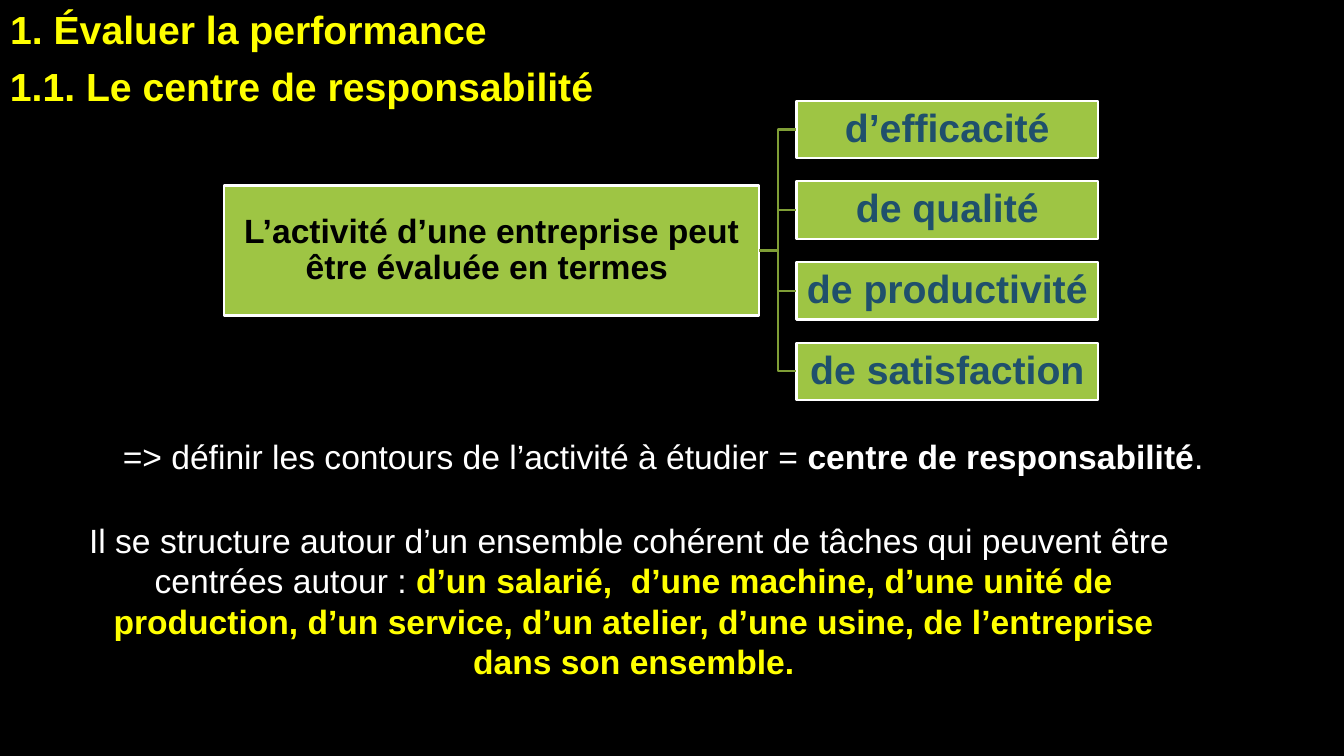
"""Build the slide on performance evaluation and the responsibility centre."""
from lxml.etree import SubElement
from pptx import Presentation
from pptx.dml.color import RGBColor
from pptx.enum.shapes import MSO_CONNECTOR as Link, MSO_SHAPE as Shape
from pptx.enum.text import MSO_ANCHOR as Anchor, MSO_AUTO_SIZE as Fit, PP_ALIGN as Align
from pptx.oxml.ns import qn
from pptx.util import Inches, Pt

COLORS = {
    "black": "000000",
    "white": "FFFFFF",
    "yellow": "FFFF00",
    "green": "9EC544",
    "olive": "7F9E36",
    "blue": "1F506C",
}


def color(name):
    return RGBColor.from_string(COLORS[name])


def write(shape, *spans, size=24, align=Align.LEFT, anchor=Anchor.TOP,
          wrap=True, spacing=1.0, inset=None):
    """Fill a shape with one paragraph of (text, colour, bold) spans."""
    frame = shape.text_frame
    frame.word_wrap = wrap
    frame.auto_size = Fit.NONE
    frame.vertical_anchor = anchor
    if inset is not None:
        frame.margin_left = frame.margin_right = Inches(inset)
        frame.margin_top = frame.margin_bottom = Inches(inset)
    para = frame.paragraphs[0]
    para.alignment = align
    para.line_spacing = spacing
    for text, tint, bold in spans:
        span = para.add_run()
        span.text = text
        span.font.name = "Arial"
        span.font.size = Pt(size)
        span.font.bold = bold
        span.font.color.rgb = color(tint)


deck = Presentation()
deck.slide_width, deck.slide_height = Inches(13.33), Inches(7.5)
page = deck.slides.add_slide(deck.slide_layouts[5])
page.background.fill.solid()
page.background.fill.fore_color.rgb = color("black")

heading_height = 0.57
title = page.shapes.title
title.left, title.top = 0, 0
title.width, title.height = Inches(10.94), Inches(heading_height)
write(title, ("1. Évaluer la performance", "yellow", True), size=28)

subtitle = page.shapes.add_textbox(0, Inches(heading_height), Inches(6.05), Inches(heading_height))
write(subtitle, ("1.1. Le centre de responsabilité", "yellow", True), size=28, wrap=False)

definition = page.shapes.add_textbox(Inches(1.12), Inches(4.28), Inches(11.7), Inches(0.5))
write(definition,
      ("=> définir les contours de l’activité à étudier = ", "white", False),
      ("centre de responsabilité", "white", True),
      (".", "white", False), align=Align.JUSTIFY)

first_row, row_step = 1.0, 0.8
nodes = [("L’activité d’une entreprise peut être évaluée en termes ",
          2.22, 1.84, 5.31, 1.29, "black", 24)]
for row, criterion in enumerate(
        ["d’efficacité", "de qualité", "de productivité", "de satisfaction"]):
    nodes.append((criterion, 7.9, first_row + row * row_step, 2.99, 0.57, "blue", 28))

boxes = []
for text, left, top, width, height, tint, size in nodes:
    box = page.shapes.add_shape(
        Shape.RECTANGLE, Inches(left), Inches(top), Inches(width), Inches(height))
    box.shadow.inherit = False
    box.fill.solid()
    box.fill.fore_color.rgb = color("green")
    box.line.color.rgb = color("white")
    box.line.width = Pt(1.5)
    write(box, (text, tint, True), size=size, align=Align.CENTER,
          anchor=Anchor.MIDDLE, spacing=0.9, inset=0.02)
    boxes.append(box)

activity, *criteria = boxes
for criterion in criteria:
    link = page.shapes.add_connector(Link.ELBOW, 0, 0, 0, 0)
    link.begin_connect(activity, 3)
    link.end_connect(criterion, 1)
    link.line.color.rgb = color("olive")
    link.line.width = Pt(1.5)
    SubElement(link._element.spPr, qn("a:effectLst"))

structure = page.shapes.add_textbox(Inches(0.63), Inches(5.11), Inches(11.31), Inches(1.72))
write(structure,
      ("Il se structure autour d’un ensemble cohérent de tâches qui peuvent être  "
       "centrées autour : ", "white", False),
      ("d’un salarié,  d’une machine, d’une unité de production, d’un service, "
       "d’un atelier, d’une usine, de l’entreprise dans son ensemble.", "yellow", True),
      align=Align.CENTER)

deck.save("out.pptx")
